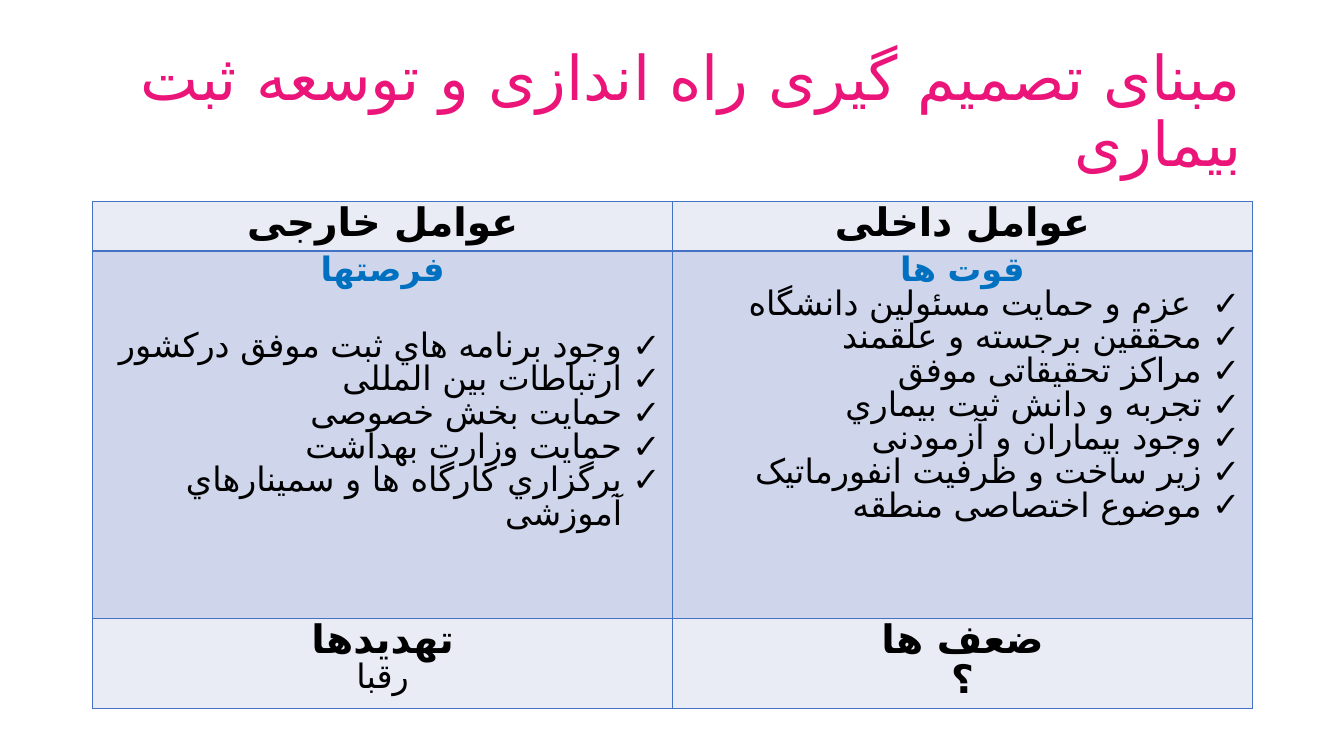
"""Build a slide with a table of internal and external factors."""
from dataclasses import dataclass

from pptx import Presentation, util as u
from pptx.dml.color import RGBColor
from pptx.enum import text
from pptx.oxml import parse_xml
from pptx.oxml.ns import nsdecls, qn


@dataclass(frozen=True)
class Theme:
    """Colours, fonts and type sizes."""
    pink: str = "EB157A"
    blue: str = "0070C0"
    black: str = "000000"
    edge: str = "4472C4"
    bands: tuple = ("E9EBF5", "CFD5EA")
    serif: str = "TeX Gyre Schola"
    sans: str = "Calibri"
    script: str = "DejaVu Sans"
    title: int = 44
    head: int = 28
    body: int = 24


T = Theme()
WIDE, HIGH = 13.33, 7.5
LEFT, SPAN = 0.92, 11.5
ROWS = (0.49, 3.65, 0.89)
HANG = 0.38

TITLE = "مبنای تصمیم گیری راه اندازی و توسعه ثبت بیماری"
CHANCES = [
    "وجود برنامه هاي ثبت موفق درکشور",
    "ارتباطات بين المللی",
    "حمایت بخش خصوصی",
    "حمایت وزارت بهداشت",
    "برگزاري کارگاه ها و سمينارهاي آموزشی",
]
POWERS = [
    " عزم و حمایت مسئولين دانشگاه",
    "محققين برجسته و علقمند",
    "مراکز تحقيقاتی موفق",
    "تجربه و دانش ثبت بيماري",
    "وجود بيماران و آزمودنی",
    "زیر ساخت و ظرفيت انفورماتيک",
    "موضوع اختصاصی منطقه",
]
KINDS = {
    "head": (T.head, T.black, True),
    "label": (T.body, T.blue, True),
    "item": (T.body, T.black, False),
    "note": (T.body, T.black, False),
}
GRID = [
    [[("head", "عوامل خارجی")], [("head", "عوامل داخلی")]],
    [[("label", "فرصتها")] + [("item", line) for line in CHANCES],
     [("label", "قوت ها")] + [("item", line) for line in POWERS]],
    [[("head", "تهدیدها"), ("note", "رقبا")],
     [("head", "ضعف ها"), ("head", "؟")]],
]
GAPS = {"فرصتها": 30}


def style(para, words, face, size, hue, bold, align):
    """Write one right-to-left paragraph."""
    para.text = words
    para.alignment = align
    font = para.font
    font.size, font.bold = u.Pt(size), bold
    font.color.rgb = RGBColor.from_string(hue)
    font.name = face
    props = para._p.get_or_add_pPr()
    props.set("rtl", "1")
    props.find(qn("a:defRPr")).append(
        parse_xml(f'<a:cs {nsdecls("a")} typeface="{T.script}"/>'))
    return props


def tick(props):
    """Give a paragraph a hanging check mark."""
    props.set("marL", str(u.Inches(HANG)))
    props.set("indent", str(u.Inches(-HANG)))
    for part in (f'buFont {nsdecls("a")} typeface="{T.script}"',
                 f'buChar {nsdecls("a")} char="✓"'):
        props.insert_element_before(
            parse_xml(f"<a:{part}/>"), "a:tabLst", "a:defRPr")


def frame(cell):
    """Draw the four borders of a cell."""
    props = cell._tc.get_or_add_tcPr()
    for spot, side in enumerate("LRTB"):
        props.insert(spot, parse_xml(
            f'<a:ln{side} {nsdecls("a")} w="{u.Pt(1)}"><a:solidFill>'
            f'<a:srgbClr val="{T.edge}"/></a:solidFill></a:ln{side}>'))


def fill(cell, lines, band):
    """Set the fill, margins and text of a cell."""
    cell.fill.solid()
    cell.fill.fore_color.rgb = RGBColor.from_string(band)
    cell.margin_left = cell.margin_right = u.Inches(0.12)
    cell.margin_top = cell.margin_bottom = u.Inches(0.05)
    frame(cell)
    body = cell.text_frame
    for spot, (kind, words) in enumerate(lines):
        para = body.add_paragraph() if spot else body.paragraphs[0]
        size, hue, bold = KINDS[kind]
        item = kind == "item"
        align = text.PP_ALIGN.RIGHT if item else text.PP_ALIGN.CENTER
        props = style(para, words, T.sans, size, hue, bold, align)
        para.line_spacing = u.Pt(size)
        para.space_after = u.Pt(GAPS.get(words, 0))
        if item:
            tick(props)


def main():
    """Lay out the title and the table, then save."""
    deck = Presentation()
    deck.slide_width, deck.slide_height = u.Inches(WIDE), u.Inches(HIGH)
    slide = deck.slides.add_slide(deck.slide_layouts[6])

    box = slide.shapes.add_textbox(
        *map(u.Inches, (LEFT, 0.4, SPAN, 1.45))).text_frame
    box.word_wrap = True
    box.vertical_anchor = text.MSO_ANCHOR.MIDDLE
    para = box.paragraphs[0]
    style(para, TITLE, T.serif, T.title, T.pink, False, text.PP_ALIGN.RIGHT)
    para.line_spacing = 0.9

    table = slide.shapes.add_table(
        len(GRID), len(GRID[0]),
        *map(u.Inches, (LEFT, 2, SPAN, sum(ROWS)))).table
    table.first_row = table.horz_banding = False
    for row, (high, cells) in enumerate(zip(ROWS, GRID)):
        table.rows[row].height = u.Inches(high)
        for col, lines in enumerate(cells):
            fill(table.cell(row, col), lines, T.bands[row % 2])

    deck.save("out.pptx")


if __name__ == "__main__":
    main()
